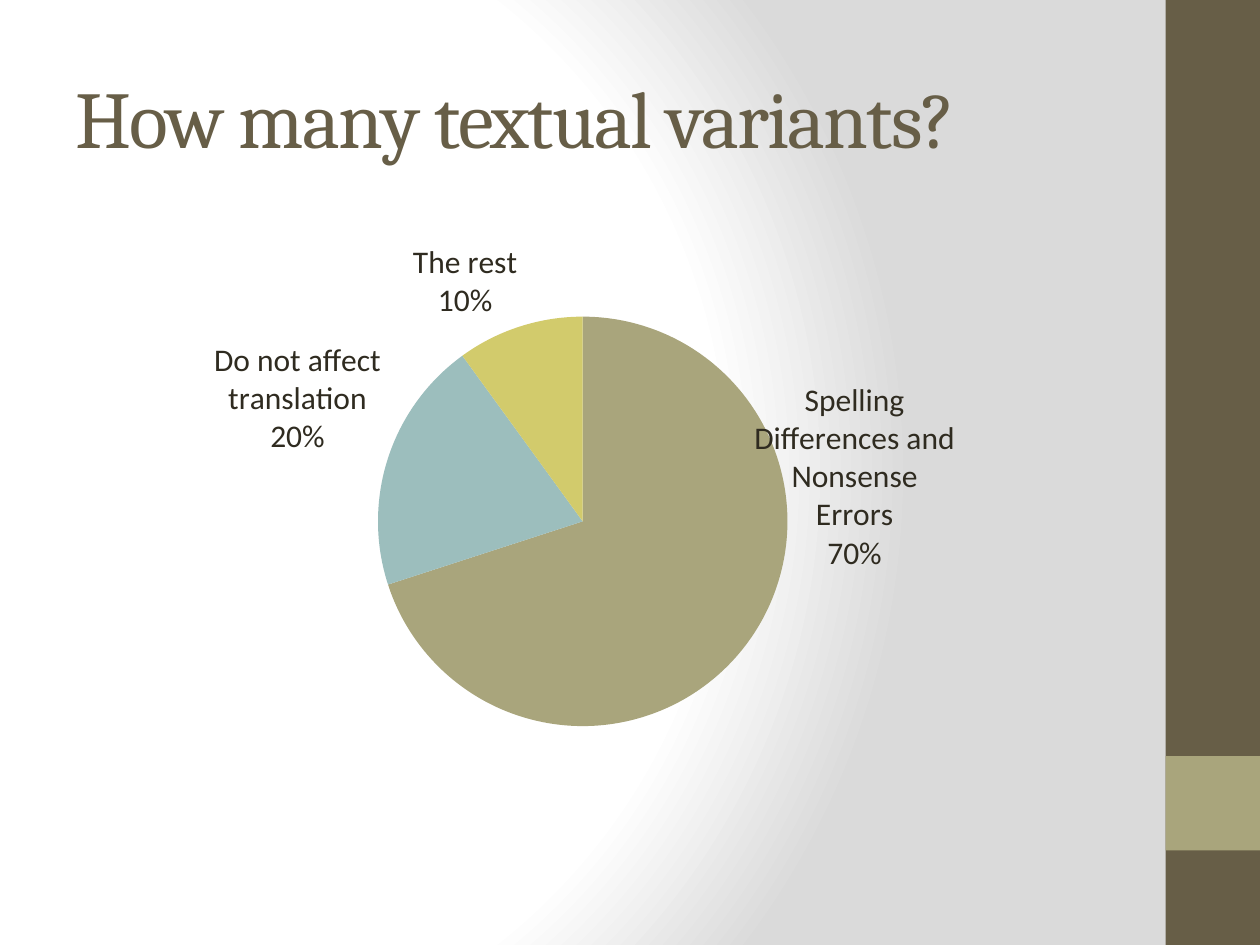
import pptx
import pptx.chart.data
import pptx.dml.color
import pptx.enum.chart
import pptx.enum.shapes
import pptx.enum.text
import pptx.oxml
import pptx.oxml.ns
import pptx.util

Pt = pptx.util.Pt
RGB = pptx.dml.color.RGBColor

WHITE = RGB(0xFF, 0xFF, 0xFF)
GREY = RGB(0xDA, 0xDA, 0xDA)
BROWN = RGB(0x67, 0x5E, 0x47)
OLIVE = RGB(0xA9, 0xA5, 0x7C)
TEAL = RGB(0x9C, 0xBE, 0xBD)
YELLOW = RGB(0xD2, 0xCB, 0x6C)
INK = RGB(0x2F, 0x2B, 0x20)

SHARES = [
    ("Spelling Differences and Nonsense Errors", 70, OLIVE),
    ("Do not affect translation", 20, TEAL),
    ("The rest", 10, YELLOW),
]


def add_back(slide):
    """Radial gradient from white to grey."""
    stops = "".join(
        f'<a:gs pos="{pos * 1000}"><a:srgbClr val="{color}"/></a:gs>'
        for pos, color in ((0, WHITE), (75, WHITE), (100, GREY)))
    fill = pptx.oxml.parse_xml(
        f'<a:gradFill {pptx.oxml.ns.nsdecls("a")} rotWithShape="1">'
        f'<a:gsLst>{stops}</a:gsLst><a:path path="circle">'
        '<a:fillToRect l="20000" t="50000" r="100000" b="50000"/>'
        '</a:path></a:gradFill>')
    back = slide.background.fill
    back.gradient()
    old = slide.element.find(".//" + pptx.oxml.ns.qn("a:gradFill"))
    old.getparent().replace(old, fill)


def add_bar(slide, left, top, width, height):
    """Side bar with a square accent near its foot."""
    parts = ((top, height, BROWN), (top + height * 0.8, width, OLIVE))
    for y, tall, color in parts:
        bar = slide.shapes.add_shape(
            pptx.enum.shapes.MSO_SHAPE.RECTANGLE,
            Pt(left), Pt(y), Pt(width), Pt(tall))
        bar.shadow.inherit = False
        bar.fill.solid()
        bar.fill.fore_color.rgb = color
        bar.line.fill.background()


def set_title(slide, left, top, width, height):
    title = slide.shapes.title
    title.left, title.top = Pt(left), Pt(top)
    title.width, title.height = Pt(width), Pt(height)
    frame = title.text_frame
    frame.text = "How many textual variants?"
    frame.word_wrap = True
    frame.vertical_anchor = pptx.enum.text.MSO_ANCHOR.MIDDLE
    line = frame.paragraphs[0]
    line.alignment = pptx.enum.text.PP_ALIGN.LEFT
    run = line.runs[0]
    run.font.name = "Cambria"
    run.font.size = Pt(46)
    run.font.color.rgb = BROWN
    run.font._element.set("spc", "-100")


def make_layout(body):
    return pptx.oxml.parse_xml(
        f'<c:layout {pptx.oxml.ns.nsdecls("c")}>'
        f'<c:manualLayout>{body}</c:manualLayout></c:layout>')


def add_pie(slide, left, top, width, height):
    data = pptx.chart.data.CategoryChartData()
    data.categories = [name for name, _, _ in SHARES]
    data.add_series("Series 1", [share for _, share, _ in SHARES])
    chart = slide.shapes.add_chart(
        pptx.enum.chart.XL_CHART_TYPE.PIE,
        Pt(left), Pt(top), Pt(width), Pt(height), data).chart
    chart.has_title = False
    chart.has_legend = False
    chart.font.name = "Calibri"
    chart.font.size = Pt(18)
    chart.font.color.rgb = INK

    # Slices
    plot = chart.plots[0]
    plot.vary_by_categories = True
    series = plot.series[0]
    for i, (_, _, color) in enumerate(SHARES):
        fill = series.points[i].format.fill
        fill.solid()
        fill.fore_color.rgb = color

    # Labels, with the first one moved up beside its slice
    spot = pptx.enum.chart.XL_LABEL_POSITION.OUTSIDE_END
    labels = series.data_labels
    labels.show_category_name = True
    labels.show_percentage = True
    labels.show_value = False
    labels.position = spot
    series.points[0].data_label.position = spot
    first = labels._element.find(pptx.oxml.ns.qn("c:dLbl"))
    for tag, on in (("showVal", 0), ("showCatName", 1), ("showPercent", 1)):
        first.find(pptx.oxml.ns.qn("c:" + tag)).set("val", str(on))
    first.insert(1, make_layout('<c:x val="0"/><c:y val="-0.4"/>'))

    # Plot area
    area = chart._chartSpace.chart.plotArea
    old = area.find(pptx.oxml.ns.qn("c:layout"))
    if old is not None:
        area.remove(old)
    area.insert(0, make_layout(
        '<c:layoutTarget val="inner"/>'
        '<c:xMode val="edge"/><c:yMode val="edge"/>'
        '<c:x val="0.3"/><c:y val="0.14"/>'
        '<c:w val="0.39"/><c:h val="0.63"/>'))


def main():
    deck = pptx.Presentation()
    deck.slide_width, deck.slide_height = Pt(720), Pt(540)
    slide = deck.slides.add_slide(deck.slide_layouts[5])
    add_back(slide)
    add_bar(slide, 666, 0, 54, 540)
    set_title(slide, 36, 21.6, 600, 90)
    add_pie(slide, 36, 126, 600, 378)
    deck.save("out.pptx")


if __name__ == "__main__":
    main()
